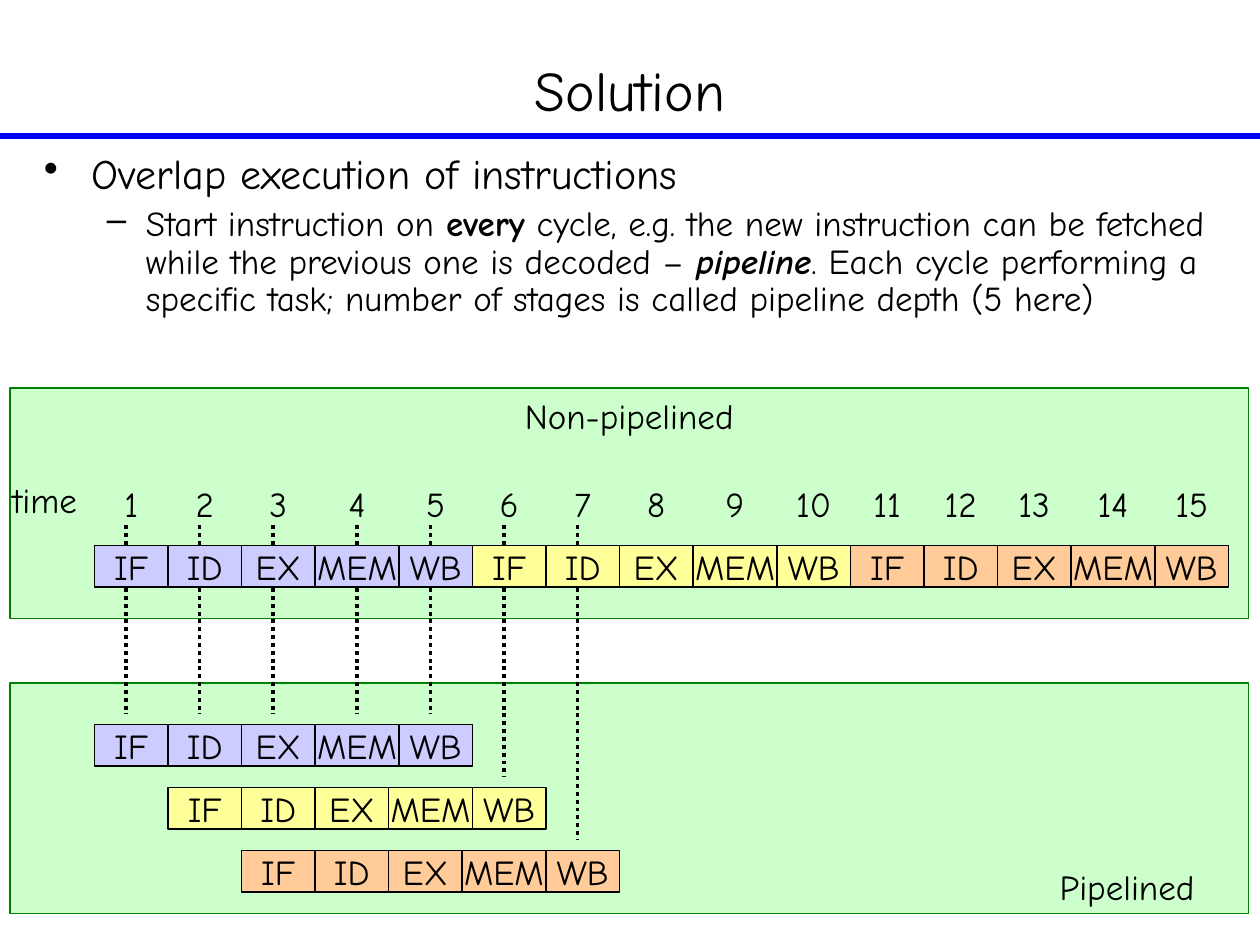
"""Build a slide comparing non-pipelined and pipelined instruction execution."""
from dataclasses import dataclass
from itertools import accumulate

from lxml.etree import SubElement
from pptx import Presentation
from pptx.dml.color import RGBColor
from pptx.enum.dml import MSO_LINE
from pptx.enum.shapes import MSO_CONNECTOR, MSO_SHAPE
from pptx.enum.text import MSO_ANCHOR as Anchor, PP_ALIGN as Align
from pptx.oxml.ns import qn
from pptx.util import Inches, Pt


@dataclass(frozen=True)
class Theme:
    font: str = "Comic Neue"
    ink: str = "000000"
    rule: str = "0000FF"
    panel: str = "CCFFCC"
    panel_edge: str = "008000"
    instructions: tuple = ("CCCCFF", "FFFF99", "FFCC99")
    title: int = 32
    heading: int = 24
    text: int = 20


theme = Theme()


def add_span(para, text, size=theme.text, bold=False, italic=False):
    span = para.add_run()
    span.text = text
    span.font.name = theme.font
    span.font.size = Pt(size)
    span.font.bold = bold
    span.font.italic = italic
    span.font.color.rgb = RGBColor.from_string(theme.ink)


def add_box(shapes, text, left, top, width, height, fill, edge, anchor=Anchor.MIDDLE):
    box = shapes.add_shape(MSO_SHAPE.RECTANGLE, Inches(left), Inches(top), Inches(width), Inches(height))
    box.shadow.inherit = False
    if fill:
        box.fill.solid()
        box.fill.fore_color.rgb = RGBColor.from_string(fill)
    else:
        box.fill.background()
    box.line.color.rgb = RGBColor.from_string(edge)
    box.line.width = Pt(0.75)
    frame = box.text_frame
    frame.word_wrap = False
    frame.vertical_anchor = anchor
    frame.paragraphs[0].alignment = Align.CENTER
    add_span(frame.paragraphs[0], text)
    return box


deck = Presentation()
deck.slide_width, deck.slide_height = Inches(10), Inches(7.5)
page = deck.slides.add_slide(deck.slide_layouts[5])

title = page.shapes.title
title.left, title.top, title.width, title.height = Inches(0.75), Inches(0.17), Inches(8.5), Inches(1.08)
title.text_frame.vertical_anchor = Anchor.MIDDLE
title.text_frame.paragraphs[0].alignment = Align.CENTER
add_span(title.text_frame.paragraphs[0], "Solution", theme.title)

body = page.shapes.add_textbox(Inches(0.25), Inches(1.17), Inches(9.58), Inches(1.75)).text_frame
body.word_wrap = True
heading, detail = body.paragraphs[0], body.add_paragraph()
detail.level = 1
for para, bullet, margin, hang, size in (
    (heading, "•", 0.38, 0.38, theme.heading),
    (detail, "–", 0.81, 0.31, theme.text),
):
    para.line_spacing = 0.9
    para.space_before = Pt(size * 0.2)
    props = para._p.get_or_add_pPr()
    props.set("marL", str(Inches(margin)))
    props.set("indent", str(-Inches(hang)))
    SubElement(props, qn("a:buChar")).set("char", bullet)
add_span(heading, "Overlap execution of instructions", theme.heading)
add_span(detail, "Start instruction on ")
add_span(detail, "every", bold=True)
add_span(detail, " cycle, e.g. the new instruction can be fetched while the previous one is decoded – ")
add_span(detail, "pipeline", bold=True, italic=True)
add_span(detail, ". Each cycle performing a specific task; number of stages is called pipeline depth (5 here)")

for label, top, anchor, inset in (
    ("Pipelined", 5.42, Anchor.BOTTOM, 8),
    ("Non-pipelined", 3.08, Anchor.TOP, 0.1),
):
    panel = add_box(page.shapes, label, 0.08, top, 9.83, 1.83, theme.panel, theme.panel_edge, anchor)
    panel.text_frame.margin_left = Inches(inset)

unit = 1 / 12
start = 0.75
stages = {"IF": 7, "ID": 7, "EX": 7, "MEM": 8, "WB": 7}
widths = list(stages.values())
offsets = list(accumulate(widths, initial=0))[:-1]
span_units = sum(widths)
cycles = [(row * span_units + offset, width) for row in range(3) for offset, width in zip(offsets, widths)]

lines = [(0, 1.08, 10, 1.08, theme.rule, 3, MSO_LINE.SOLID)]
for (offset, width), bottom in zip(cycles, [5.67] * 5 + [6.17, 6.67]):
    x = start + (offset + width // 2) * unit
    lines.append((x, 4.17, x, bottom, theme.ink, 2.25, MSO_LINE.ROUND_DOT))
for x1, y1, x2, y2, color, weight, dash in lines:
    line = page.shapes.add_connector(MSO_CONNECTOR.STRAIGHT, Inches(x1), Inches(y1), Inches(x2), Inches(y2))
    line.line.color.rgb = RGBColor.from_string(color)
    line.line.width = Pt(weight)
    line.line.dash_style = dash
    SubElement(line._element.spPr, qn("a:effectLst"))

for row, color in enumerate(theme.instructions):
    for left, top in (
        (start + row * span_units * unit, 4.33),
        (start + row * widths[0] * unit, 5.75 + row * 0.5),
    ):
        group = page.shapes.add_group_shape()
        for (stage, width), offset in zip(stages.items(), offsets):
            add_box(group.shapes, stage, left + offset * unit, top, width * unit, 0.33, color, theme.ink)

for number, (offset, width) in enumerate(cycles, 1):
    add_box(page.shapes, str(number), start + offset * unit, 3.83, width * unit, 0.33, None, theme.panel)

time_label = page.shapes.add_textbox(Inches(0), Inches(3.75), Inches(0.78), Inches(0.43)).text_frame
time_label.word_wrap = False
add_span(time_label.paragraphs[0], "time")

deck.save("out.pptx")
